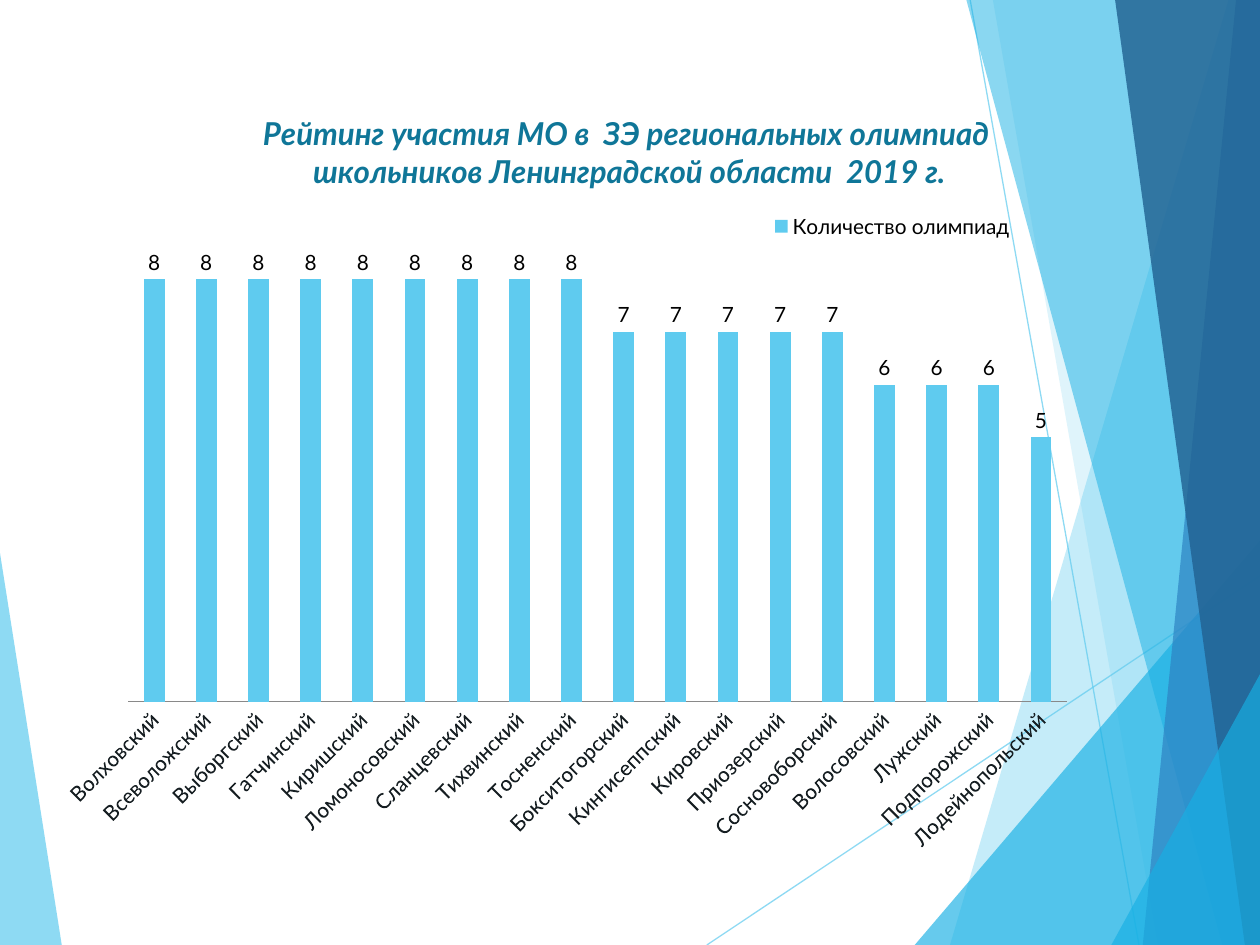
import pptx
import pptx.util
import pptx.chart.data
import pptx.dml.color
import pptx.enum.chart
import pptx.enum.shapes
import pptx.oxml
import pptx.oxml.ns
import lxml.etree

Inches, Pt = pptx.util.Inches, pptx.util.Pt
qn = pptx.oxml.ns.qn
SKY, CYAN, BLUE, NAVY = "5FCBEF", "17B0E4", "2E83C3", "226292"
FONT = "Lato"

# Points in inches, fill, opacity in percent; from back to front
LEFT = [([(0, 4.39), (0.49, 7.5), (0, 7.5)], SKY, 70)]
RAYS = [((5.61, 7.5), (10, 4.57)), ((7.7, 0), (9.04, 7.5))]
RIGHT = [
    ([(9.75, 0), (7.54, 7.5), (10, 7.5), (10, 0)], SKY, 36),
    ([(7.88, 0), (9.19, 7.5), (10, 7.5), (10, 0)], SKY, 20),
    ([(7.26, 7.5), (10, 4.29), (10, 7.5)], CYAN, 66),
    ([(7.67, 0), (9.7, 7.5), (10, 7.5), (10, 0)], CYAN, 50),
    ([(9.81, 0), (9.07, 7.5), (10, 7.5), (10, 0)], BLUE, 70),
    ([(8.85, 0), (9.88, 7.5), (10, 7.5), (10, 0)], NAVY, 82),
    ([(8.82, 7.5), (10, 5.35), (10, 7.5)], CYAN, 66),
]

TITLE = "Рейтинг участия МО в  ЗЭ региональных олимпиад\n школьников Ленинградской области  2019 г."
SERIES = "Количество олимпиад"
SCORES = {
    8: ["Волховский", "Всеволожский", "Выборгский", "Гатчинский", "Киришский",
        "Ломоносовский", "Сланцевский", "Тихвинский", "Тосненский"],
    7: ["Бокситогорский", "Кингисеппский", "Кировский", "Приозерский", "Сосновоборский"],
    6: ["Волосовский", "Лужский", "Подпорожский"],
    5: ["Лодейнопольский"],
}


def rgb(code):
    return pptx.dml.color.RGBColor.from_string(code)


def paint(fill, code, alpha):
    """Fill with a solid colour at the given opacity in percent."""
    fill.solid()
    fill.fore_color.rgb = rgb(code)
    color = fill._xPr.find(qn("a:solidFill"))[0]
    lxml.etree.SubElement(color, qn("a:alpha"), val=str(alpha * 1000))


def style(font, size, code):
    font.name, font.size = FONT, Pt(size)
    font.color.rgb = rgb(code)


def add_facets(slide, left, top, facets):
    for points, code, alpha in facets:
        spots = [(left + Inches(x), top + Inches(y)) for x, y in points]
        pen = slide.shapes.build_freeform(*spots[0])
        pen.add_line_segments(spots[1:], close=True)
        shape = pen.convert_to_shape()
        shape.shadow.inherit = False
        shape.line.fill.background()
        paint(shape.fill, code, alpha)


def add_rays(slide, left, top, rays):
    for (x1, y1), (x2, y2) in rays:
        ray = slide.shapes.add_connector(
            pptx.enum.shapes.MSO_CONNECTOR.STRAIGHT,
            left + Inches(x1), top + Inches(y1), left + Inches(x2), top + Inches(y2))
        ray.line.width = Pt(0.75)
        paint(ray.line.fill, SKY, 70)
        lxml.etree.SubElement(ray._element.spPr, qn("a:effectLst"))


def place(part, inner=False, **box):
    """Pin a chart part at fractions of the chart's size."""
    for old in part.findall(qn("c:layout")):
        part.remove(old)
    layout = lxml.etree.Element(qn("c:layout"))
    manual = lxml.etree.SubElement(layout, qn("c:manualLayout"))
    if inner:
        lxml.etree.SubElement(manual, qn("c:layoutTarget"), val="inner")
    for key in "xy":
        lxml.etree.SubElement(manual, qn(f"c:{key}Mode"), val="edge")
    for key, value in box.items():
        lxml.etree.SubElement(manual, qn(f"c:{key}"), val=str(value))
    after = part.find(qn("c:overlay"))
    part.insert(0 if after is None else part.index(after), layout)


def add_rating(slide, left, top, width, height):
    enum = pptx.enum.chart
    data = pptx.chart.data.CategoryChartData()
    data.categories = [name for names in SCORES.values() for name in names]
    data.add_series(SERIES, [score for score, names in SCORES.items() for _ in names])
    chart = slide.shapes.add_chart(
        enum.XL_CHART_TYPE.COLUMN_CLUSTERED, left, top, width, height, data).chart
    style(chart.font, 10, "000000")

    chart.has_title = True
    chart.chart_title.text_frame.text = TITLE
    for line in chart.chart_title.text_frame.paragraphs:
        style(line.font, 18, "0F7698")
        line.font.bold = line.font.italic = True
    place(chart.chart_title._element, x=0.17, y=0.04)

    chart.has_legend = True
    chart.legend.position = enum.XL_LEGEND_POSITION.TOP
    chart.legend.include_in_layout = False
    style(chart.legend.font, 12, "000000")
    place(chart.legend._element, x=0.64, y=0.17, w=0.22, h=0.04)

    place(chart._chartSpace.find(".//" + qn("c:plotArea")),
          inner=True, x=0.05, y=0.19, w=0.86, h=0.6)
    plot = chart.plots[0]
    plot.gap_width = 150
    plot.vary_by_categories = False
    bars = plot.series[0].format.fill
    bars.solid()
    bars.fore_color.rgb = rgb(SKY)
    plot.has_data_labels = True
    plot.data_labels.show_value = True
    plot.data_labels.position = enum.XL_LABEL_POSITION.OUTSIDE_END
    style(plot.data_labels.font, 12, "000000")

    value = chart.value_axis
    value.minimum_scale, value.maximum_scale = 0, 9
    value.has_major_gridlines = False
    value.visible = False
    names = chart.category_axis
    names.major_tick_mark = enum.XL_TICK_MARK.NONE
    names.format.line.color.rgb = rgb("898989")
    style(names.tick_labels.font, 12, "161E22")
    names._element.find(".//" + qn("a:bodyPr")).set("rot", "-2700000")


def main():
    deck = pptx.Presentation()
    deck.slide_width, deck.slide_height = Inches(10), Inches(7.5)
    slide = deck.slides.add_slide(deck.slide_layouts[6])
    add_facets(slide, 0, 0, LEFT)
    add_rays(slide, 0, 0, RAYS)
    add_facets(slide, 0, 0, RIGHT)
    add_rating(slide, Inches(0.51), Inches(0.6), Inches(8.74), Inches(6.29))
    deck.save("out.pptx")


if __name__ == "__main__":
    main()
